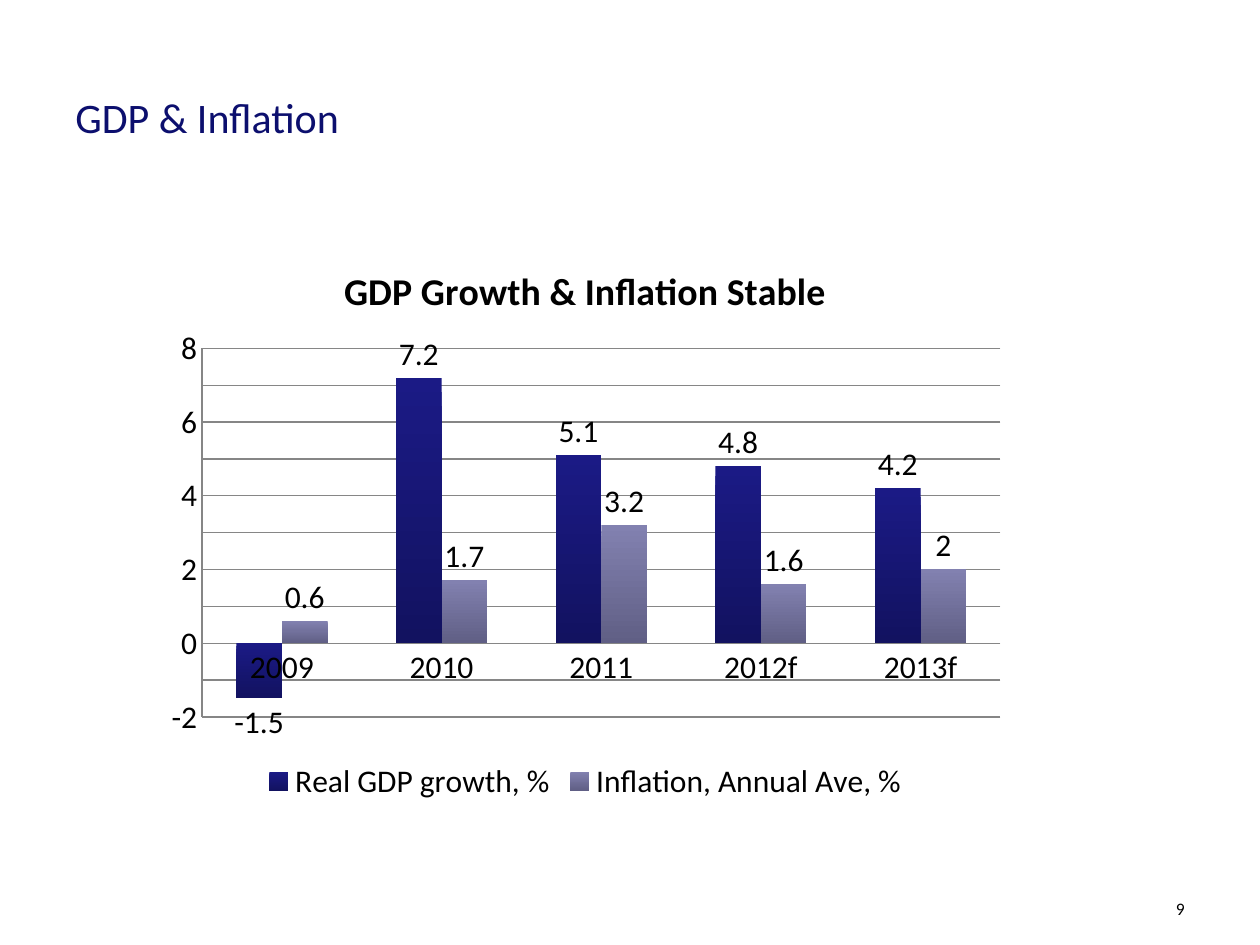
"""Build the GDP and inflation slide."""
from copy import deepcopy
from lxml import etree
from pptx import Presentation
from pptx import util as u
from pptx.chart.data import CategoryChartData
from pptx.dml.color import RGBColor
from pptx.enum import chart as ch, text
from pptx.oxml import ns


def rgb(code):
    return RGBColor.from_string(code)


def write(para, words, size, color, bold=False):
    run = para.add_run()
    run.text = words
    font = run.font
    font.name, font.size, font.bold = "Calibri", u.Pt(size), bold
    font.color.rgb = rgb(color)


deck = Presentation()
deck.slide_width, deck.slide_height = u.Cm(25.4), u.Cm(19.05)
slide = deck.slides.add_slide(deck.slide_layouts[6])

left, mid, top = text.PP_ALIGN.LEFT, text.MSO_ANCHOR.MIDDLE, text.MSO_ANCHOR.TOP
for words, place, size, color, align, anchor in (
    ("GDP & Inflation", (1.27, 0.94, 20.5, 2.84), 24, "0C0F6E", left, mid),
    ("9", (18.21, 17.98, 5.92, 0.69), 10, "000000", text.PP_ALIGN.RIGHT, top),
):
    frame = slide.shapes.add_textbox(*map(u.Cm, place)).text_frame
    frame.word_wrap = True
    frame.vertical_anchor = anchor
    para = frame.paragraphs[0]
    para.alignment = align
    write(para, words, size, color)

data = CategoryChartData()
data.categories = ["2009", "2010", "2011", "2012f", "2013f"]
data.add_series("Real GDP growth, %", (-1.5, 7.2, 5.1, 4.8, 4.2))
data.add_series("Inflation, Annual Ave, %", (0.6, 1.7, 3.2, 1.6, 2))
place = map(u.Cm, (3.1, 4.83, 17.4, 11.43))
chart = slide.shapes.add_chart(ch.XL_CHART_TYPE.COLUMN_CLUSTERED, *place, data).chart
chart.font.name, chart.font.size = "Calibri", u.Pt(18)
chart.font.color.rgb = rgb("000000")
chart.has_title = True
title = chart.chart_title
title.include_in_layout = False
write(title.text_frame.paragraphs[0], "GDP Growth & Inflation Stable", 21.6, "000000", True)
chart.has_legend = True
chart.legend.position = ch.XL_LEGEND_POSITION.BOTTOM
chart.legend.include_in_layout = False

cats, vals = chart.category_axis, chart.value_axis
vals.minimum_scale, vals.maximum_scale = -2, 8
vals.major_unit, vals.minor_unit = 2, 1
vals.has_major_gridlines = vals.has_minor_gridlines = True
for axis in (cats, vals):
    axis.major_tick_mark = axis.minor_tick_mark = ch.XL_TICK_MARK.NONE
for part in (cats, vals, vals.major_gridlines):
    part.format.line.color.rgb = rgb("868686")
    part.format.line.width = u.Pt(0.75)

area = chart.element.find(".//" + ns.qn("c:plotArea"))
major, minor = (area.find(".//" + ns.qn(tag)) for tag in ("c:majorGridlines", "c:minorGridlines"))
minor.append(deepcopy(major.find(ns.qn("c:spPr"))))

plot = chart.plots[0]
plot.gap_width, plot.overlap = 150, 0
plot.vary_by_categories = False
for bars, shades in zip(plot.series, (("1B1A85", "121260"), ("8281B0", "605F85"))):
    bars.invert_if_negative = False
    fill = bars.format.fill
    fill.gradient()
    fill.gradient_angle = 270
    for stop, shade in zip(fill.gradient_stops, shades):
        stop.color.rgb = rgb(shade)
    tags = bars.data_labels
    tags.show_value = True
    tags.position = ch.XL_LABEL_POSITION.OUTSIDE_END

for old in area.findall(ns.qn("c:layout")):
    area.remove(old)
box = etree.Element(ns.qn("c:layout"))
area.insert(0, box)
inner = etree.SubElement(box, ns.qn("c:manualLayout"))
for tag, val in (
    ("layoutTarget", "inner"), ("xMode", "edge"), ("yMode", "edge"),
    ("x", "0.056"), ("y", "0.192"), ("w", "0.925"), ("h", "0.65"),
):
    etree.SubElement(inner, ns.qn("c:" + tag)).set("val", val)

deck.save("out.pptx")
